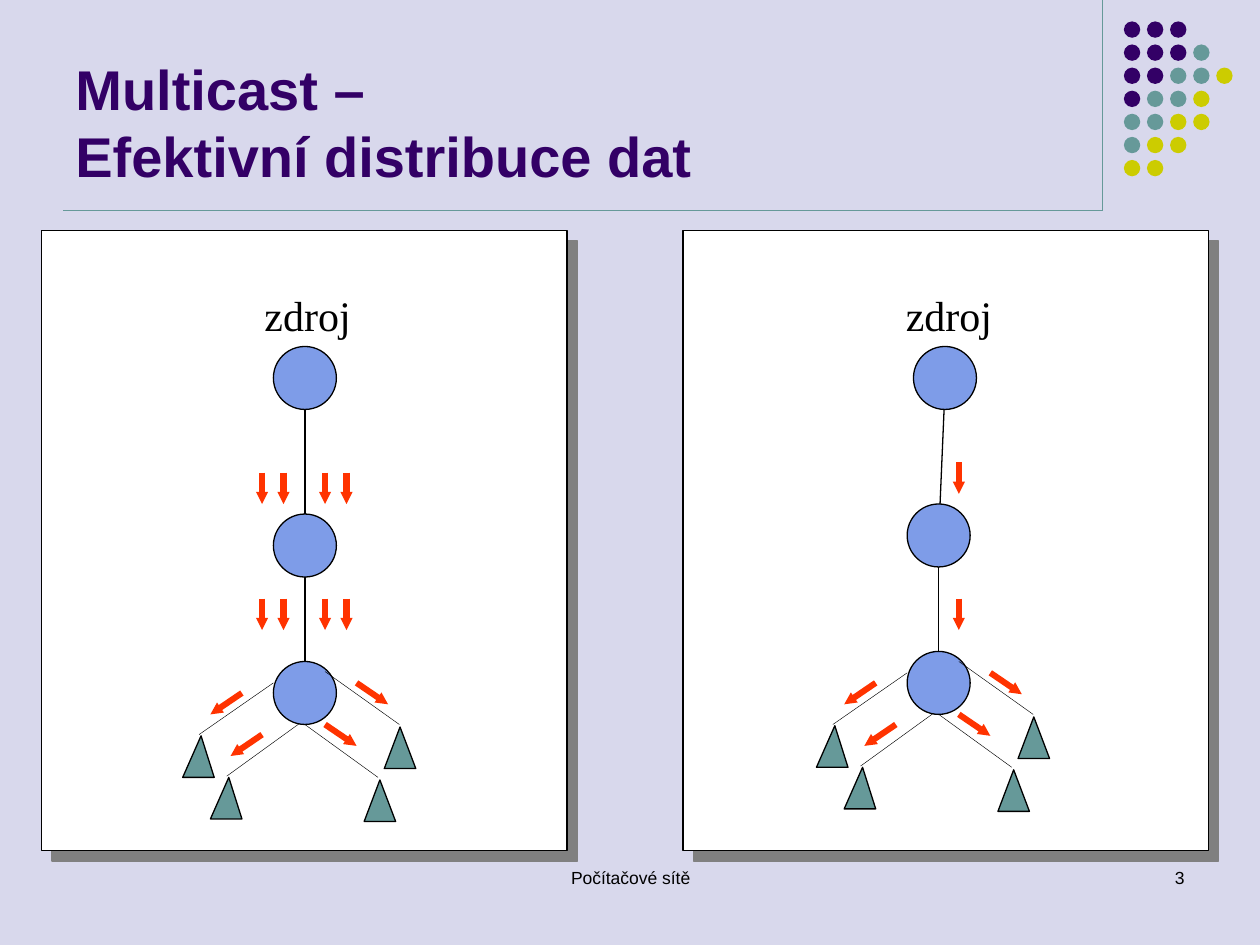
from dataclasses import dataclass

from lxml import etree
from pptx import Presentation
from pptx import util as u
from pptx.dml.color import RGBColor
from pptx.enum import shapes, text
from pptx.oxml import ns

I = u.Inches
MSO = shapes.MSO_SHAPE
ALIGN = text.PP_ALIGN


@dataclass(frozen=True)
class Theme:
    bg: str = "D8D8EC"
    purple: str = "330066"
    teal: str = "669999"
    lime: str = "CCCC00"
    node: str = "7E9CE8"
    packet: str = "FF3300"
    shadow: str = "808080"
    white: str = "FFFFFF"
    black: str = "000000"
    sans: str = "Arial"
    serif: str = "Times New Roman"
    title: int = 32
    label: int = 24
    footer: int = 10
    thin: float = 0.25
    line: float = 0.75
    arrow: float = 3.5


T = Theme()


def rgb(value):
    return RGBColor.from_string(value)


def sub(parent, tag, **attrs):
    return etree.SubElement(parent, ns.qn(tag), attrs)


def add_text(s, box, content, size, color=T.black, **fmt):
    """Text box; fmt may hold font, bold, align, anchor and wrap."""
    tf = s.shapes.add_textbox(*map(I, box)).text_frame
    frame = {"word_wrap": fmt.get("wrap", True),
             "vertical_anchor": fmt.get("anchor", text.MSO_ANCHOR.TOP)}
    for name, value in frame.items():
        setattr(tf, name, value)
    p = tf.paragraphs[0]
    p.text = content
    p.alignment = fmt.get("align", ALIGN.LEFT)
    font = {"size": u.Pt(size), "name": fmt.get("font", T.sans),
            "bold": fmt.get("bold", False)}
    for r in p.runs:
        for name, value in font.items():
            setattr(r.font, name, value)
        r.font.color.rgb = rgb(color)


def add_shape(s, kind, box, fill, outline=True):
    sp = s.shapes.add_shape(kind, *map(I, box))
    sp.shadow.inherit = False
    sp.fill.solid()
    sp.fill.fore_color.rgb = rgb(fill)
    if outline:
        sp.line.color.rgb = rgb(T.black)
        sp.line.width = u.Pt(T.line)
    else:
        sp.line.fill.background()
    return sp


def add_line(s, start, end, color=T.black, width=T.line):
    c = s.shapes.add_connector(shapes.MSO_CONNECTOR.STRAIGHT,
                               *map(I, (*start, *end)))
    c.line.color.rgb = rgb(color)
    c.line.width = u.Pt(width)
    sub(c._element.spPr, "a:effectLst")
    return c


def add_packet(s, start, end):
    c = add_line(s, start, end, T.packet, T.arrow)
    sub(c.line._get_or_add_ln(), "a:tailEnd", type="triangle", w="sm", len="sm")


def add_node(s, x, y):
    add_shape(s, MSO.OVAL, (x - 0.25, y - 0.25, 0.5, 0.5), T.node)


def add_receiver(s, x, y, peak):
    sp = add_shape(s, MSO.ISOSCELES_TRIANGLE, (x, y, 0.25, 0.33), T.teal)
    sp.adjustments[0] = peak


def add_panel(s, x):
    """White panel with a hard shadow and the source label."""
    sp = add_shape(s, MSO.RECTANGLE, (x, 1.83, 4.17, 4.92), T.white)
    effects = sp._element.spPr.find(ns.qn("a:effectLst"))
    shadow = sub(effects, "a:outerShdw", blurRad="0", dist=str(u.Pt(8.5)),
                 dir="2700000", algn="ctr", rotWithShape="0")
    sub(shadow, "a:srgbClr", val=T.shadow)
    add_text(s, (x + 1.67, 2.25, 0.89, 0.5), "zdroj", T.label,
             font=T.serif, wrap=False)


def add_tree(s, nodes, links):
    """Chain of nodes; the last one, the hub, feeds four receivers."""
    hx, hy = nodes[-1]

    def at(dx, dy):
        return hx + dx, hy + dy

    # Branches and links behind the nodes
    for start, end in (((0.58, 0.67), (0, 0.25)), ((-0.04, 0.24), (-0.62, 0.66))):
        add_line(s, at(*start), at(*end), width=T.thin)
    for start, end in links:
        add_line(s, start, end)
    for node in nodes:
        add_node(s, *node)

    # Branches in front of the hub
    for start, end in (((-0.25, -0.08), (-0.84, 0.33)), ((0.75, 0.25), (0.16, -0.17))):
        add_line(s, at(*start), at(*end), width=T.thin)

    # Receivers
    for dx, dy, peak in ((-0.75, 0.67, 0.583), (-0.97, 0.34, 0.583),
                         (0.47, 0.69, 0.5), (0.63, 0.27, 0.5)):
        add_receiver(s, *at(dx, dy), peak)

    # One packet for each branch
    for dx, dy, step in ((0.41, -0.08, 0.25), (-0.5, 0, -0.25),
                         (0.16, 0.25, 0.25), (-0.34, 0.33, -0.25)):
        add_packet(s, at(dx, dy), at(dx + step, dy + 0.17))


def add_falling_packets(s, xs, y):
    for x in xs:
        add_packet(s, (x, y), (x, y + 0.25))


def add_frame(s):
    """Rules, dot pattern, title and footer."""
    add_line(s, (8.75, 0), (8.75, 1.67), T.teal)
    colors = {"p": T.purple, "t": T.teal, "l": T.lime}
    rows = ("ppp", "pppt", "ppttl", "pttl", "ttll", "tll", "ll")
    for i, row in enumerate(rows):
        for j, key in enumerate(row):
            box = (8.92 + j * 0.1833, 0.17 + i * 0.1833, 0.13, 0.13)
            add_shape(s, MSO.OVAL, box, colors[key], outline=False)
    add_line(s, (0.5, 1.67), (8.75, 1.67), T.teal)
    add_text(s, (3.42, 6.83, 3.17, 0.5), "Počítačové sítě", T.footer,
             align=ALIGN.CENTER)
    add_text(s, (7.17, 6.83, 2.33, 0.5), "3", T.footer, align=ALIGN.RIGHT)
    add_text(s, (0.5, 0.13, 8.25, 1.42), "Multicast – \vEfektivní distribuce dat",
             T.title, T.purple, bold=True, anchor=text.MSO_ANCHOR.BOTTOM)


def main():
    prs = Presentation()
    prs.slide_width, prs.slide_height = I(10), I(7.5)
    s = prs.slides.add_slide(prs.slide_layouts[6])
    s.background.fill.solid()
    s.background.fill.fore_color.rgb = rgb(T.bg)
    add_frame(s)

    # Unicast: one packet per receiver on every link
    add_panel(s, 0.33)
    add_tree(s, [(2.42, 3), (2.42, 4.33), (2.42, 5.5)],
             [((2.42, 4.58), (2.42, 5.25)), ((2.42, 2.92), (2.42, 4.33))])
    for y in (3.75, 4.75):
        add_falling_packets(s, (2.08, 2.25, 2.58, 2.75), y)

    # Multicast: a single packet on every shared link
    add_panel(s, 5.42)
    add_tree(s, [(7.5, 3), (7.45, 4.25), (7.45, 5.42)],
             [((7.45, 4.5), (7.45, 5.17)), ((7.5, 3.08), (7.45, 4.25))])
    for y in (3.67, 4.75):
        add_falling_packets(s, (7.61,), y)

    prs.save("out.pptx")


if __name__ == "__main__":
    main()
